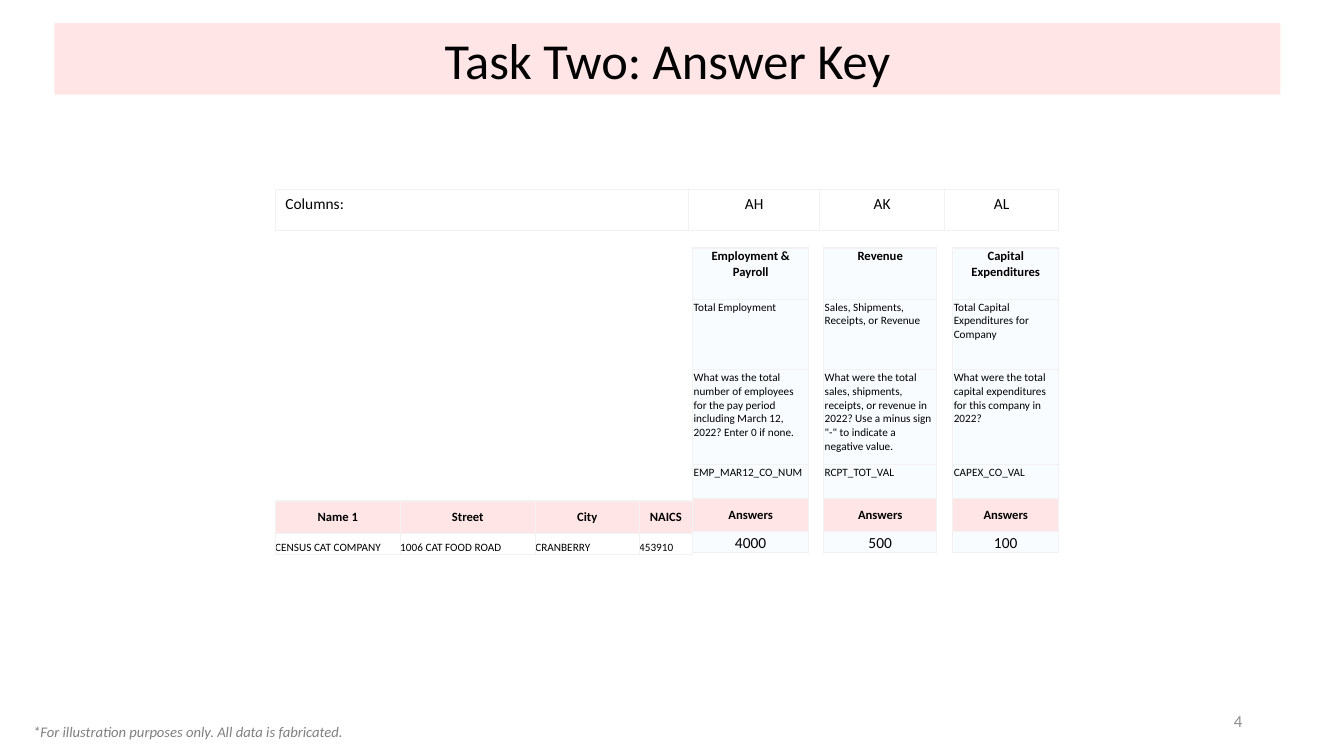
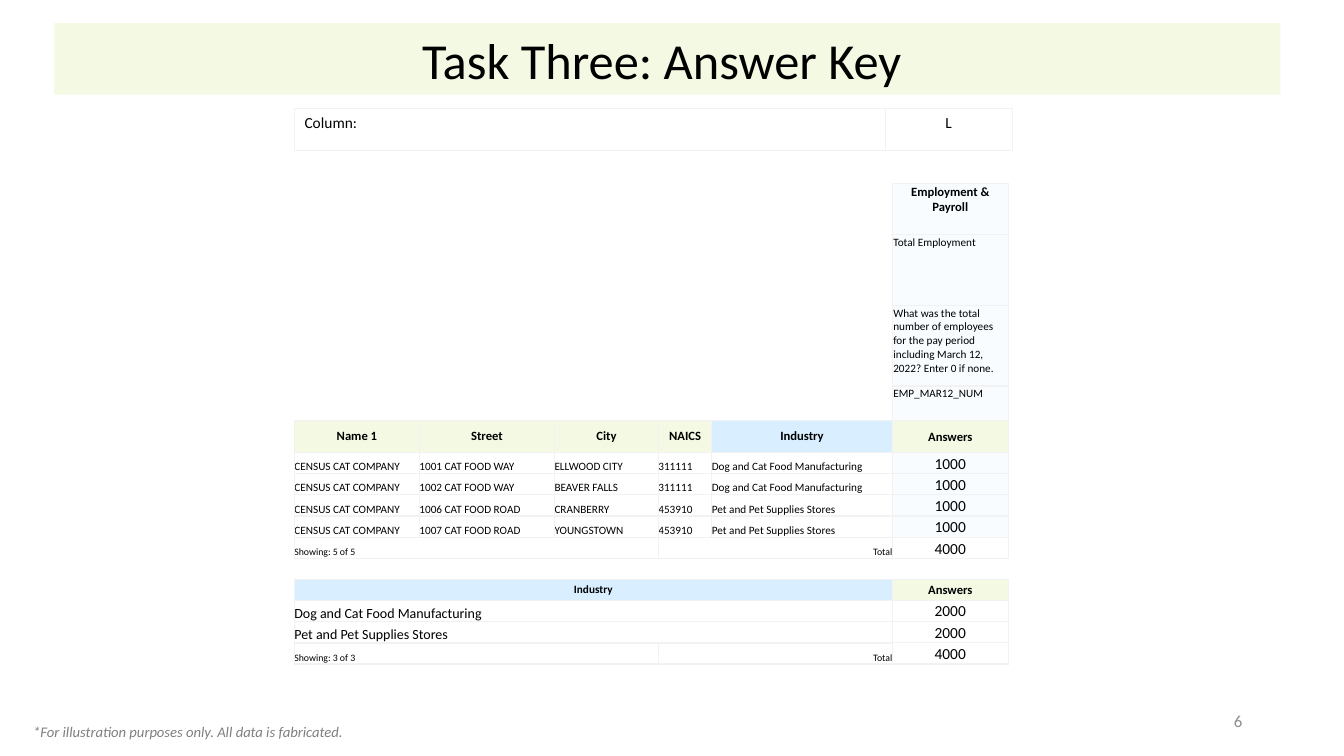
from lxml import etree
from pptx import Presentation
from pptx import util as u
from pptx.dml.color import RGBColor
from pptx.enum import text as t
from pptx.oxml.ns import qn

FONT, INK, EDGE = "Calibri", "000000", "F2F2F2"
PALE, BLUE, WHITE = "F8FCFF", "D9EEFF", "FFFFFF"
ALIGN = {"l": t.PP_ALIGN.LEFT, "c": t.PP_ALIGN.CENTER, "r": t.PP_ALIGN.RIGHT}
ANCHOR = {"t": t.MSO_ANCHOR.TOP, "m": t.MSO_ANCHOR.MIDDLE, "b": t.MSO_ANCHOR.BOTTOM}

# size, bold, align, anchor, fill, edges
STYLES = {
    "head": (9, True, "c", "m", "tint", "LRTB"),
    "sort": (9, True, "c", "m", BLUE, "LRTB"),
    "band": (8, True, "c", "m", BLUE, "LRTB"),
    "data": (8, False, "l", "b", None, "LRTB"),
    "item": (10, False, "l", "b", None, "LTB"),
    "foot": (7, False, "l", "b", None, "LRTB"),
    "total": (7, False, "r", "b", None, "LRTB"),
    "topic": (9, True, "c", "t", PALE, "LRTB"),
    "ask": (8, False, "l", "t", PALE, "LRTB"),
    "num": (11, False, "c", "b", PALE, "LRTB"),
    "sum": (11, False, "c", "b", None, "LRTB"),
    "count": (11, False, "c", "m", None, "LRTB"),
    "label": (11, False, "l", "t", None, "LRTB"),
    "key": (11, False, "c", "t", None, "LRTB"),
    "gap": (8, False, "l", "t", WHITE, "LR"),
    "blank": (8, False, "l", "t", None, "TB"),
}

FIRM = "CENSUS CAT COMPANY"
FIELDS = ["Name 1", "Street", "City", "NAICS"]
WIDTHS = [1.24, 1.34, 1.03, 0.53]
HEAD, LINE = 0.32, 0.21
STAFF = ("What was the total number of employees for the pay period "
         "including March 12, 2022? Enter 0 if none.")
DOGS, PETS = "Dog and Cat Food Manufacturing", "Pet and Pet Supplies Stores"
SITES = [
    (FIRM, "1001 CAT FOOD WAY", "ELLWOOD CITY", "311111", DOGS),
    (FIRM, "1002 CAT FOOD WAY", "BEAVER FALLS", "311111", DOGS),
    (FIRM, "1006 CAT FOOD ROAD", "CRANBERRY", "453910", PETS),
    (FIRM, "1007 CAT FOOD ROAD", "YOUNGSTOWN", "453910", PETS),
]
TOPICS = [
    ("topic", "Employment & Payroll", "Revenue", "Capital Expenditures"),
    ("ask", "Total Employment", "Sales, Shipments, Receipts, or Revenue",
     "Total Capital Expenditures for Company"),
    ("ask", STAFF,
     "What were the total sales, shipments, receipts, or revenue in 2022? "
     "Use a minus sign \"-\" to indicate a negative value.",
     "What were the total capital expenditures for this company in 2022?"),
    ("ask", "EMP_MAR12_CO_NUM", "RCPT_TOT_VAL", "CAPEX_CO_VAL"),
    ("head", "Answers", "Answers", "Answers"),
    ("num", "4000", "500", "100"),
]
COUNTS = [
    ("topic", "Employment & Payroll"), ("ask", "Total Employment"),
    ("ask", STAFF), ("ask", "EMP_MAR12_NUM"), ("head", "Answers"),
    *[("num", "1000")] * 4, ("sum", "4000"), ("blank", ""),
    ("head", "Answers"), ("count", "2000"), ("count", "2000"), ("count", "4000"),
]


def cells(style, *words):
    return [(style, word, 1) for word in words]


def spaced(row):
    out = cells(*row[:2])
    for word in row[2:]:
        out += cells("gap", "") + cells(row[0], word)
    return out


def footer(shown):
    return [("foot", shown, 3), ("total", "Total", 2)]


def color(code):
    return RGBColor.from_string(code)


def write(frame, words, size, ink=INK, bold=False, slant=False, align="l"):
    frame.text = words
    para = frame.paragraphs[0]
    para.alignment = ALIGN[align]
    for run in para.runs:
        font = run.font
        font.name, font.size, font.bold, font.italic = FONT, u.Pt(size), bold, slant
        font.color.rgb = color(ink)
    if not words:
        etree.SubElement(para._p, qn("a:endParaRPr"), sz=str(size * 100))


def border(cell, edges):
    props = cell._tc.get_or_add_tcPr()
    for side in "LRTB":
        line = etree.SubElement(props, qn("a:ln" + side), w="12700")
        if side in edges:
            fill = etree.SubElement(line, qn("a:solidFill"))
            etree.SubElement(fill, qn("a:srgbClr"), val=EDGE)
        else:
            etree.SubElement(line, qn("a:noFill"))


def paint(cell, style, words, tint, pad):
    size, bold, align, anchor, fill, edges = STYLES[style]
    border(cell, edges)
    if fill:
        cell.fill.solid()
        cell.fill.fore_color.rgb = color(tint if fill == "tint" else fill)
    else:
        cell.fill.background()
    cell.margin_left, cell.margin_top, cell.margin_right, cell.margin_bottom = map(u.Inches, pad)
    cell.vertical_anchor = ANCHOR[anchor]
    write(cell.text_frame, words, size, bold=bold, align=align)


def grid(slide, left, top, cols, rows, body, tint, pad):
    box = [u.Inches(n) for n in (left, top, sum(cols), sum(rows))]
    table = slide.shapes.add_table(len(rows), len(cols), *box).table
    table.first_row = table.horz_banding = False
    for col, width in zip(table.columns, cols):
        col.width = u.Inches(width)
    for row, height in zip(table.rows, rows):
        row.height = u.Inches(height)
    for r, line in enumerate(body):
        c = 0
        for style, words, span in line:
            for k in range(span):
                paint(table.cell(r, c + k), style, "" if k else words, tint, pad)
            if span > 1:
                table.cell(r, c).merge(table.cell(r, c + span - 1))
            c += span


def note(slide, box, words, size, ink, **look):
    frame = slide.shapes.add_textbox(*map(u.Inches, box)).text_frame
    frame.word_wrap = True
    write(frame, words, size, ink, **look)
    return frame


def page(deck, title, tint, number):
    slide = deck.slides.add_slide(deck.slide_layouts[5])
    band = slide.shapes.title
    band.left, band.top, band.width, band.height = map(u.Inches, (0.54, 0.23, 12.16, 0.71))
    band.fill.solid()
    band.fill.fore_color.rgb = color(tint)
    band.text_frame.auto_size = t.MSO_AUTO_SIZE.NONE
    band.text_frame.vertical_anchor = ANCHOR["m"]
    write(band.text_frame, title, 36, align="c")
    note(slide, (0.23, 7.12, 7.43, 0.29),
         "*For illustration purposes only. All data is fabricated.", 10.5, "808080", slant=True)
    frame = note(slide, (9.42, 6.95, 3, 0.4), number, 12, "8C8C8C", align="r")
    frame.vertical_anchor = ANCHOR["m"]
    return slide


SHEET, FORM, BAR = (0, 0, 0, 0), (0.01, 0.01, 0.01, 0), (0.1, 0.05, 0.1, 0.05)


def task_two(deck):
    tint, left = "FFE5E5", 2.73
    slide = page(deck, "Task Two: Answer Key", tint, "4")
    grid(slide, left, 4.97, WIDTHS, [HEAD, LINE],
         [cells("head", *FIELDS), cells("data", *SITES[2][:4])], tint, SHEET)
    grid(slide, left + sum(WIDTHS), 2.46, [1.15, 0.15, 1.12, 0.16, 1.05],
         [0.51, 0.7, 0.94, 0.34, HEAD, LINE], [spaced(row) for row in TOPICS], tint, FORM)
    grid(slide, left, 1.88, [4.1, 1.3, 1.24, 1.13], [0.41],
         [cells("label", "Columns:") + cells("key", "AH", "AK", "AL")], tint, BAR)


def task_three(deck):
    tint, left = "F4F9E3", 2.92
    slide = page(deck, "Task Three: Answer Key ", tint, "6")
    cols = WIDTHS + [1.79]
    body = [cells("head", *FIELDS) + cells("sort", "Industry")]
    body += [cells("data", *site) for site in SITES]
    body += [footer("Showing: 5 of 5"), [("blank", "", 5)], [("band", "Industry", 5)]]
    body += [[("item", name, 5)] for name in (DOGS, PETS)]
    body += [footer("Showing: 3 of 3")]
    grid(slide, left, 4.17, cols, [HEAD] + [LINE] * 10, body, tint, SHEET)
    grid(slide, left + sum(cols), 1.82, [1.15], [0.51, 0.7, 0.8, 0.34, HEAD] + [LINE] * 10,
         [cells(*row) for row in COUNTS], tint, FORM)
    grid(slide, left, 1.08, [5.86, 1.26], [0.41],
         [cells("label", "Column:") + cells("key", "L")], tint, BAR)


def main():
    deck = Presentation()
    deck.slide_width, deck.slide_height = u.Inches(13.33), u.Inches(7.5)
    task_two(deck)
    task_three(deck)
    deck.save("out.pptx")


if __name__ == "__main__":
    main()
